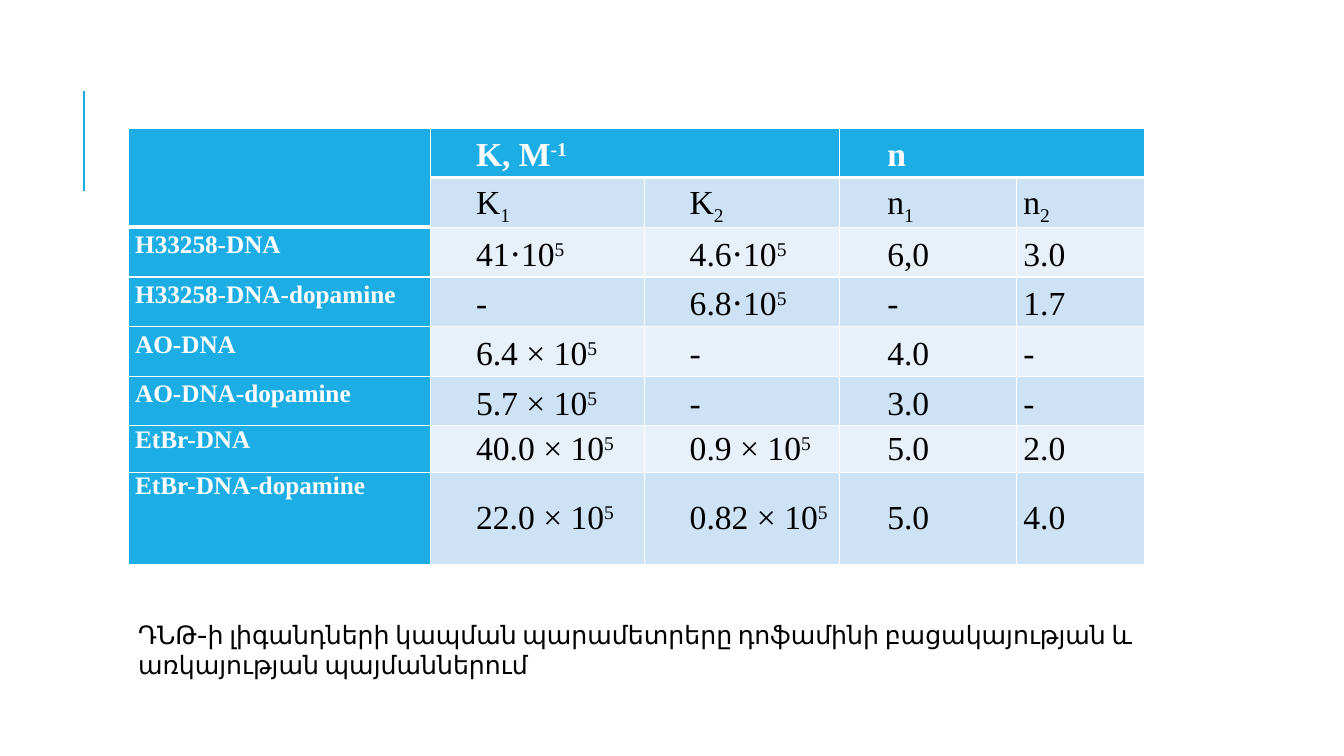
from dataclasses import dataclass

from lxml import etree
from pptx import Presentation
from pptx.dml.color import RGBColor
from pptx.enum.shapes import MSO_CONNECTOR
from pptx.enum.text import MSO_ANCHOR, MSO_AUTO_SIZE, PP_ALIGN
from pptx.oxml.ns import qn
from pptx.util import Inches, Pt

STRAIGHT = MSO_CONNECTOR.STRAIGHT
TOP, MIDDLE = MSO_ANCHOR.TOP, MSO_ANCHOR.MIDDLE
GROW = MSO_AUTO_SIZE.SHAPE_TO_FIT_TEXT
LEFT, JUSTIFY = PP_ALIGN.LEFT, PP_ALIGN.JUSTIFY

ACCENT, DARK_BAND, LIGHT_BAND = "1CADE4", "CDE3F5", "E8F1FA"
WHITE, BLACK = "FFFFFF", "000000"
SERIF, SANS = "Times New Roman", "Cabin"

# Grid: one hundred columns by one hundred rows over the whole slide
WIDTH, HEIGHT = Inches(13.33), Inches(7.5)
MARGIN = 9.53


@dataclass(frozen=True)
class TableColumn:
    width: float
    indent: float


@dataclass(frozen=True)
class TableRow:
    height: float
    spacing: float
    texts: tuple[str, ...]


COLUMNS = [
    TableColumn(22.51, 0),
    TableColumn(15.9, 2.85),
    TableColumn(14.55, 2.85),
    TableColumn(13.13, 3),
    TableColumn(9.53, 0),
]

# "^" starts a superscript, "_" a subscript
ROWS = [
    TableRow(6.57, 1.15, ("", "K, M^-1", "", "n", "")),
    TableRow(6.57, 1.15, ("", "K_1", "K_2", "n_1", "n_2")),
    TableRow(6.57, 1.15, ("H33258-DNA", "41⋅10^5", "4.6⋅10^5", "6,0", "3.0")),
    TableRow(6.57, 1.15, ("H33258-DNA-dopamine", "-", "6.8⋅10^5", "-", "1.7")),
    TableRow(6.57, 1.15, ("AO-DNA", "6.4 × 10^5", "-", "4.0", "-")),
    TableRow(6.57, 1.15, ("AO-DNA-dopamine", "5.7 × 10^5", "-", "3.0", "-")),
    TableRow(6.13, 1, ("EtBr-DNA", "40.0 × 10^5", "0.9 × 10^5", "5.0", "2.0")),
    TableRow(12.17, 1, ("EtBr-DNA-dopamine", "22.0 × 10^5", "0.82 × 10^5", "5.0", "4.0")),
]
CAPTION = ("ԴՆԹ-ի լիգանդների կապման պարամետրերը դոֆամինի "
           "բացակայության և առկայության պայմաններում")


def across(columns: float) -> int:
    return round(WIDTH * columns / 100)


def down(rows: float) -> int:
    return round(HEIGHT * rows / 100)


def color(value: str) -> RGBColor:
    return RGBColor.from_string(value)


def write(text_frame, text: str, *, size: float, font: str, fill: str, bold: bool = False,
          align=LEFT, spacing: float = 1, indent: float = 0) -> None:
    """Fill the first paragraph, raising or lowering the part after a mark."""
    paragraph = text_frame.paragraphs[0]
    paragraph.alignment = align
    paragraph.line_spacing = spacing
    paragraph._p.get_or_add_pPr().set("marL", str(across(indent)))
    mark = "^" if "^" in text else "_"
    base, _, script = text.partition(mark)
    for part, baseline in ((base, 0), (script, 30000 if mark == "^" else -25000)):
        if not part:
            continue
        run = paragraph.add_run()
        run.text = part
        run.font.size, run.font.name, run.font.bold = Pt(size), font, bold
        run.font.color.rgb = color(fill)
        if baseline:
            run.font._element.set("baseline", str(baseline))


def set_borders(cell, widths: dict[str, float]) -> None:
    properties = cell._tc.get_or_add_tcPr()
    for edge, width in widths.items():
        line = etree.SubElement(properties, qn(f"a:ln{edge}"), w=str(Pt(width)))
        fill = etree.SubElement(line, qn("a:solidFill"))
        etree.SubElement(fill, qn("a:srgbClr"), val=WHITE)


def format_cell(cell, row: int, column: int) -> None:
    is_label = column == 0
    is_header = row == 0 or is_label
    under_header = row == 0 or (row == 1 and is_label)
    widths = {"L": 1, "R": 1}
    if row == 0:
        widths["T"] = 1
    widths["B"] = 3 if under_header else 1
    set_borders(cell, widths)
    cell.fill.solid()
    band = DARK_BAND if row % 2 else LIGHT_BAND
    cell.fill.fore_color.rgb = color(ACCENT if is_header else band)
    cell.vertical_anchor = TOP if is_label else MIDDLE
    cell.margin_left = cell.margin_right = across(0.53)
    cell.margin_top = cell.margin_bottom = 0
    text = ROWS[row].texts[column]
    if text:
        write(cell.text_frame, text, size=18 if is_label else 24, font=SERIF,
              fill=WHITE if is_header else BLACK, bold=is_header, align=JUSTIFY,
              spacing=ROWS[row].spacing, indent=COLUMNS[column].indent)


def add_binding_table(slide) -> None:
    frame = slide.shapes.add_table(
        len(ROWS), len(COLUMNS), across(MARGIN), down(16.93),
        across(sum(column.width for column in COLUMNS)),
        down(sum(row.height for row in ROWS)))
    table = frame.table
    table.first_row = table.horz_banding = False
    for index, column in enumerate(COLUMNS):
        table.columns[index].width = across(column.width)
    for index, row in enumerate(ROWS):
        table.rows[index].height = down(row.height)
        for position in range(len(COLUMNS)):
            format_cell(table.cell(index, position), index, position)
    # Header spans
    for start, end in (((0, 0), (1, 0)), ((0, 1), (0, 2)), ((0, 3), (0, 4))):
        table.cell(*start).merge(table.cell(*end))


def add_accent_line(slide) -> None:
    line = slide.shapes.add_connector(STRAIGHT, across(6.23), down(25.33), across(6.23), down(12))
    line.line.color.rgb = color(ACCENT)
    line.line.width = Pt(1.5)
    etree.SubElement(line._element.spPr, qn("a:effectLst"))


def add_caption(slide) -> None:
    box = slide.shapes.add_textbox(across(MARGIN), down(81.2), across(83.05), down(9.47))
    box.text_frame.word_wrap = True
    box.text_frame.auto_size = GROW
    write(box.text_frame, CAPTION, size=18, font=SANS, fill=BLACK)


def main() -> None:
    presentation = Presentation()
    presentation.slide_width, presentation.slide_height = WIDTH, HEIGHT
    slide = presentation.slides.add_slide(presentation.slide_layouts[6])
    add_accent_line(slide)
    add_binding_table(slide)
    add_caption(slide)
    presentation.save("out.pptx")


if __name__ == "__main__":
    main()
